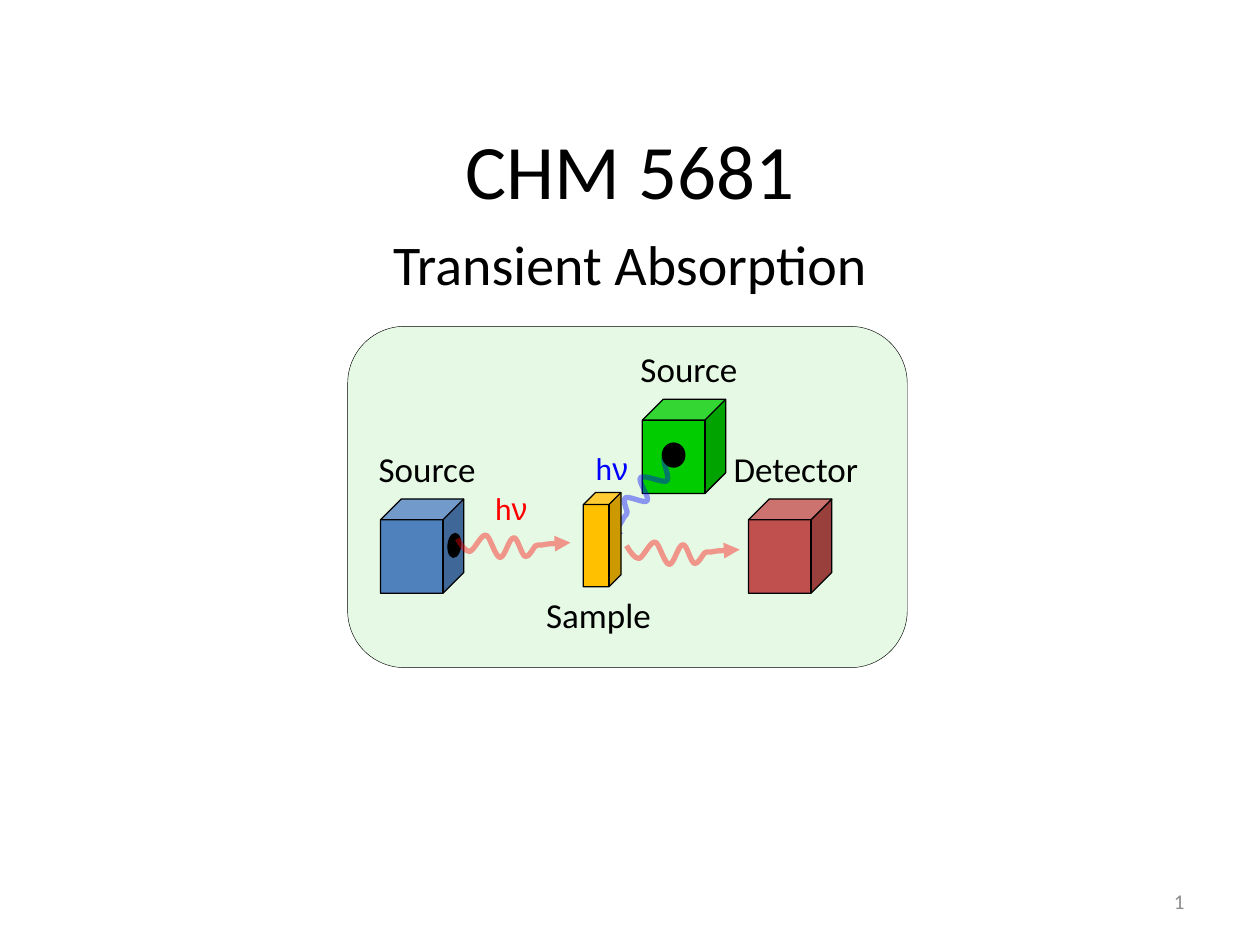
from math import cos, radians, sin

from lxml.etree import SubElement
from pptx import Presentation
from pptx.dml.color import RGBColor
from pptx.enum.shapes import MSO_SHAPE as Preset
from pptx.enum.text import MSO_ANCHOR as Anchor, MSO_AUTO_SIZE as AutoSize, PP_ALIGN as Align
from pptx.oxml.ns import qn
from pptx.util import Cm, Pt

BLACK, RED, BLUE, GREEN = "000000", "FF0000", "0000FF", "00CC00"

# Light wave in cm around its centre: the tip, then three points per Bézier curve
WAVE = [
    (1.14, -0.1),
    (1.14, -0.1), (0.69, -0.08), (0.56, -0.05),
    (0.43, -0.05), (0.48, -0.05), (0.43, -0.03),
    (0.38, 0.03), (0.3, 0.2), (0.23, 0.18),
    (0.15, 0.15), (0.08, -0.2), (0, -0.2),
    (-0.1, -0.2), (-0.18, 0.2), (-0.28, 0.2),
    (-0.38, 0.18), (-0.48, -0.23), (-0.56, -0.25),
    (-0.66, -0.28), (-0.79, 0.05), (-0.89, 0.08),
    (-0.97, 0.08), (-1.07, -0.05), (-1.14, -0.18),
]


def color(hex_string):
    return RGBColor.from_string(hex_string)


def set_alpha(properties, percent):
    for element in properties.iter(qn("a:srgbClr")):
        SubElement(element, qn("a:alpha"), val=str(percent * 1000))


class SlideBuilder:
    font_name = "Calibri"

    def __init__(self, slide):
        self.slide = slide

    def fill_text(self, shape, runs, size, hex_color=BLACK, align=Align.CENTER, anchor=Anchor.TOP):
        frame = shape.text_frame
        frame_format = {"word_wrap": True, "auto_size": AutoSize.NONE, "vertical_anchor": anchor}
        for name, value in frame_format.items():
            setattr(frame, name, value)
        paragraph = frame.paragraphs[0]
        paragraph.alignment = align
        for text, font_name in runs:
            run = paragraph.add_run()
            run.text = text
            run.font.color.rgb = color(hex_color)
            for name, value in {"name": font_name, "size": Pt(size)}.items():
                setattr(run.font, name, value)

    def placeholder(self, index, box, text, size, anchor):
        shape = self.slide.placeholders[index]
        for name, value in zip(("left", "top", "width", "height"), box):
            setattr(shape, name, Cm(value))
        self.fill_text(shape, [(text, self.font_name)], size, anchor=anchor)

    def text(self, box, text, size=20, **style):
        shape = self.slide.shapes.add_textbox(*map(Cm, box))
        self.fill_text(shape, [(text, self.font_name)], size, **style)

    def photon_label(self, box, hex_color):
        shape = self.slide.shapes.add_textbox(*map(Cm, box))
        self.fill_text(shape, [("h", self.font_name), ("ν", "Arial")], 18, hex_color, Align.LEFT)

    def shape(self, preset, box, fill, line_width=None, rotation=0):
        shape = self.slide.shapes.add_shape(preset, *map(Cm, box))
        shape.shadow.inherit = False
        shape.rotation = rotation
        shape.fill.solid()
        shape.fill.fore_color.rgb = color(fill)
        if line_width is None:
            shape.line.fill.background()
        else:
            shape.line.color.rgb = color(BLACK)
            shape.line.width = Pt(line_width)
        return shape

    def cube(self, left, top, fill, width=1.68):
        return self.shape(Preset.CUBE, (left, top, width, 1.9), fill, 0)

    def wave(self, center_x, center_y, hex_color, angle=0):
        cosine, sine = cos(radians(angle)), sin(radians(angle))
        points = [
            (Cm(center_x + x * cosine - y * sine), Cm(center_y + x * sine + y * cosine))
            for x, y in WAVE
        ]
        builder = self.slide.shapes.build_freeform(*points[0])
        builder.add_line_segments(points[1:], close=False)
        shape = builder.convert_to_shape()
        shape.shadow.inherit = False
        shape.fill.background()
        shape.line.color.rgb = color(hex_color)
        shape.line.width = Pt(3)

        # Join every three straight segments into one Bézier curve
        properties = shape._element.spPr
        outline = properties.find(".//" + qn("a:path"))
        segments = outline.findall(qn("a:lnTo"))
        for start in range(0, len(segments), 3):
            curve = SubElement(outline, qn("a:cubicBezTo"))
            for segment in segments[start:start + 3]:
                curve.append(segment[0])
                outline.remove(segment)

        # Transparent line with an arrowhead at the tip
        line = properties.find(qn("a:ln"))
        set_alpha(line, 40)
        SubElement(line, qn("a:headEnd"), type="triangle")


def main():
    presentation = Presentation()
    presentation.slide_width, presentation.slide_height = Cm(25.4), Cm(19.05)
    builder = SlideBuilder(presentation.slides.add_slide(presentation.slide_layouts[0]))

    # Titles and slide number
    builder.placeholder(0, (1.91, 1.35, 21.59, 4.09), "CHM 5681", 44, Anchor.MIDDLE)
    builder.placeholder(1, (3.81, 4.5, 17.78, 1.8), "Transient Absorption", 32, Anchor.TOP)
    builder.text((18.21, 17.65, 5.92, 1.02), "1", 12, hex_color="8C8C8C",
                 align=Align.RIGHT, anchor=Anchor.MIDDLE)

    # Panel
    panel = builder.shape(Preset.ROUNDED_RECTANGLE, (7.01, 6.58, 11.28, 6.88), GREEN, 0.25)
    set_alpha(panel._element.spPr.find(qn("a:solidFill")), 10)

    # Pump source and detector
    builder.cube(12.95, 8.05, GREEN)
    builder.text((12.47, 6.88, 2.84, 1.12), "Source")
    builder.photon_label((11.76, 8.92, 1.27, 1.02), BLUE)
    builder.text((10.39, 11.84, 3.35, 1.12), "Sample")
    builder.text((14.1, 8.89, 3.89, 1.12), "Detector")
    builder.cube(15.09, 10.06, "C0504D")

    # Pump light and transmitted light
    builder.wave(12.89, 9.97, BLUE, angle=129.2)
    builder.wave(13.77, 11.18, RED)
    builder.shape(Preset.OVAL, (13.34, 8.92, 0.48, 0.51), BLACK)

    # Sample
    sample = builder.cube(11.76, 9.93, "FFC000", width=0.76)
    sample.adjustments[0] = 0.32

    # Probe source and its light
    builder.cube(7.67, 10.06, "4F81BD")
    builder.text((7.19, 8.89, 2.84, 1.12), "Source")
    builder.shape(Preset.OVAL, (9.02, 10.74, 0.28, 0.51), BLACK, rotation=5.7)
    builder.photon_label((9.73, 9.73, 1.47, 1.02), RED)
    builder.wave(10.36, 11.04, RED)

    presentation.save("out.pptx")


if __name__ == "__main__":
    main()
